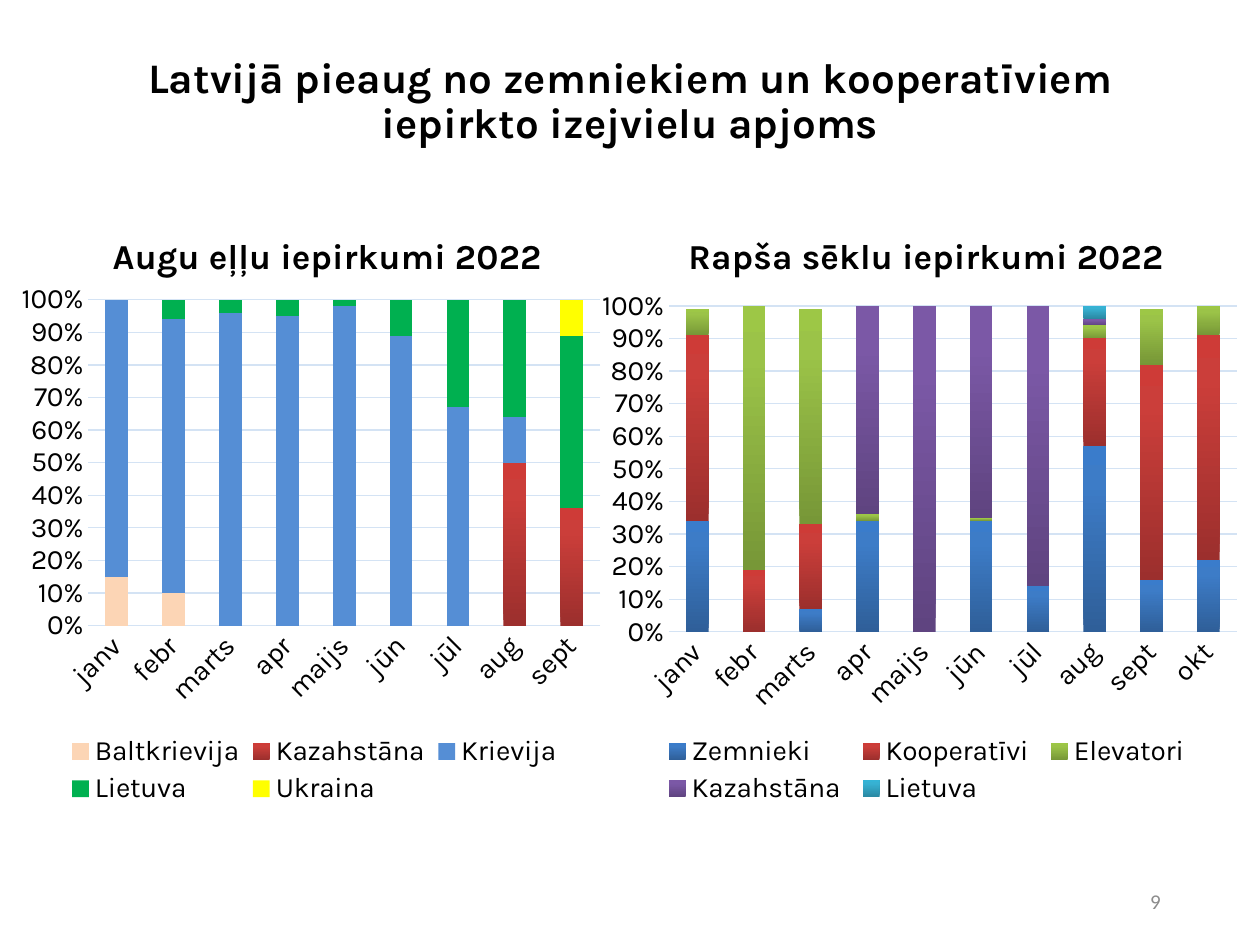
from dataclasses import dataclass

from pptx import Presentation
from pptx.chart.data import CategoryChartData
from pptx.dml.color import RGBColor
from pptx.enum.chart import XL_CHART_TYPE, XL_LEGEND_POSITION, XL_TICK_MARK
from pptx.enum.text import MSO_ANCHOR, PP_ALIGN
from pptx.oxml import parse_xml
from pptx.oxml.ns import nsdecls
from pptx.util import Inches, Pt


@dataclass(frozen=True)
class Theme:
    font: str = "Karla"
    number_font: str = "Calibri"
    text: str = "000000"
    muted: str = "8C8C8C"
    grid: str = "D4E3F4"
    peach: str = "FCD5B5"
    sky: str = "558ED5"
    green: str = "00B050"
    yellow: str = "FFFF00"
    blue_fade: tuple = ("2F5F99", "3D7CC7", "3A7CCB")
    red_fade: tuple = ("9C2F2D", "CB3E3A", "CE3B37")
    lime_fade: tuple = ("779737", "9BC348", "9DC746")
    purple_fade: tuple = ("5F4480", "7B58A6", "7C57A8")
    teal_fade: tuple = ("2A88A2", "37B1D2", "34B4D6")
    title_size: int = 24
    chart_title_size: int = 20
    label_size: int = 16
    number_size: int = 12


class SlideBuilder:
    def __init__(self, slide, theme):
        self.slide = slide
        self.theme = theme

    def style_font(self, font, size, color=None, name=None, bold=False):
        font.name = name or self.theme.font
        font.size = Pt(size)
        font.bold = bold
        font.color.rgb = RGBColor.from_string(color or self.theme.text)

    def add_text(self, box, text, size, align, spacing=1.0, **style):
        shape = self.slide.shapes.add_textbox(*map(Inches, box))
        frame = shape.text_frame
        frame.word_wrap = True
        frame.vertical_anchor = MSO_ANCHOR.MIDDLE
        paragraph = frame.paragraphs[0]
        paragraph.alignment = align
        paragraph.line_spacing = spacing
        run = paragraph.add_run()
        run.text = text
        self.style_font(run.font, size, **style)

    def style_line(self, line):
        line.color.rgb = RGBColor.from_string(self.theme.grid)
        line.width = Pt(0.75)

    def fill_series(self, series, color):
        if isinstance(color, str):
            series.format.fill.solid()
            series.format.fill.fore_color.rgb = RGBColor.from_string(color)
            return
        stops = "".join(
            f'<a:gs pos="{position}"><a:srgbClr val="{stop}"/></a:gs>'
            for position, stop in zip((0, 80000, 100000), color)
        )
        gradient = parse_xml(
            f'<a:gradFill {nsdecls("a")} rotWithShape="1"><a:gsLst>{stops}</a:gsLst>'
            '<a:lin ang="16200000" scaled="0"/></a:gradFill>'
        )
        series._element.get_or_add_spPr().insert(0, gradient)

    def place(self, predecessor, x, y, width=None, height=None, inner=False):
        target = '<c:layoutTarget val="inner"/>' if inner else ""
        sizes = "" if width is None else f'<c:w val="{width}"/><c:h val="{height}"/>'
        layout = parse_xml(
            f'<c:layout {nsdecls("c")}><c:manualLayout>{target}'
            '<c:xMode val="edge"/><c:yMode val="edge"/>'
            f'<c:x val="{x}"/><c:y val="{y}"/>{sizes}</c:manualLayout></c:layout>'
        )
        parent = predecessor.getparent()
        for old in parent.findall(layout.tag):
            parent.remove(old)
        predecessor.addnext(layout)

    def add_stacked_chart(self, kind, box, title, categories, series_rows,
                          title_at, plot_at, legend_at, maximum=None):
        data = CategoryChartData()
        data.categories = categories
        for name, color, values in series_rows:
            data.add_series(name, values)
        chart = self.slide.shapes.add_chart(kind, *map(Inches, box), data).chart
        self.style_font(chart.font, self.theme.label_size)

        chart.has_title = True
        run = chart.chart_title.text_frame.paragraphs[0].add_run()
        run.text = title
        self.style_font(run.font, self.theme.chart_title_size, bold=True)
        chart.chart_title.include_in_layout = False
        self.place(chart.chart_title._element.tx, *title_at)

        plot = chart.plots[0]
        plot.gap_width = 150
        plot.overlap = 100
        plot.vary_by_categories = False
        for series, (name, color, values) in zip(plot.series, series_rows):
            self.fill_series(series, color)

        for axis in (chart.category_axis, chart.value_axis):
            axis.major_tick_mark = XL_TICK_MARK.NONE
            axis.minor_tick_mark = XL_TICK_MARK.NONE
            self.style_font(axis.tick_labels.font, self.theme.label_size)
        self.style_line(chart.category_axis.format.line)
        chart.category_axis._element.txPr.bodyPr.set("rot", "-2700000")
        values_axis = chart.value_axis
        values_axis.format.line.fill.background()
        self.style_line(values_axis.major_gridlines.format.line)
        values_axis.tick_labels.number_format = "0%"
        values_axis.tick_labels.number_format_is_linked = False
        values_axis.major_unit = 0.1
        values_axis.minimum_scale = 0
        if maximum:
            values_axis.maximum_scale = maximum

        chart.has_legend = True
        legend = chart.legend
        legend.position = XL_LEGEND_POSITION.BOTTOM
        legend.include_in_layout = False
        self.style_font(legend.font, self.theme.label_size)
        self.place(legend._element.legendPos, *legend_at)
        plot_area = plot._element.getparent()
        anchor = parse_xml(f'<c:layout {nsdecls("c")}/>')
        for old in plot_area.findall(anchor.tag):
            plot_area.remove(old)
        plot_area.insert(0, anchor)
        self.place_plot(anchor, plot_at)

    def place_plot(self, anchor, plot_at):
        following = anchor.getnext()
        self.place(following, *plot_at, inner=True)
        following.addprevious(following.getnext())


def main():
    theme = Theme()
    presentation = Presentation()
    presentation.slide_width = Inches(10)
    presentation.slide_height = Inches(7.5)
    slide = presentation.slides.add_slide(presentation.slide_layouts[6])
    builder = SlideBuilder(slide, theme)
    months = ["janv", "febr", "marts", "apr", "maijs", "jūn", "jūl", "aug", "sept", "okt"]

    builder.add_stacked_chart(
        XL_CHART_TYPE.COLUMN_STACKED_100, (0.08, 1.55, 4.78, 4.88),
        "Augu eļļu iepirkumi 2022", months[:9],
        [
            ("Baltkrievija", theme.peach, (15, 10, 0, 0, 0, 0, 0, 0, 0)),
            ("Kazahstāna", theme.red_fade, (0, 0, 0, 0, 0, 0, 0, 50, 36)),
            ("Krievija", theme.sky, (85, 84, 96, 95, 98, 89, 67, 14, 0)),
            ("Lietuva", theme.green, (0, 6, 4, 5, 2, 11, 33, 36, 53)),
            ("Ukraina", theme.yellow, (0, 0, 0, 0, 0, 0, 0, 0, 11)),
        ],
        title_at=(0.16, 0.05), plot_at=(0.13, 0.17, 0.85, 0.53),
        legend_at=(0.08, 0.87, 0.85, 0.13),
    )
    builder.add_stacked_chart(
        XL_CHART_TYPE.COLUMN_STACKED, (4.68, 1.55, 5.24, 4.88),
        "Rapša sēklu iepirkumi 2022", months,
        [
            ("Zemnieki", theme.blue_fade,
             (0.34, 0, 0.07, 0.34, 0, 0.34, 0.14, 0.57, 0.16, 0.22)),
            ("Kooperatīvi", theme.red_fade,
             (0.57, 0.19, 0.26, 0, 0, 0, 0, 0.33, 0.66, 0.69)),
            ("Elevatori", theme.lime_fade,
             (0.08, 0.81, 0.66, 0.02, 0, 0.01, 0, 0.04, 0.17, 0.1)),
            ("Kazahstāna", theme.purple_fade,
             (0, 0, 0, 0.64, 1, 0.65, 0.86, 0.02, 0, 0)),
            ("Lietuva", theme.teal_fade, (0, 0, 0, 0, 0, 0, 0, 0.06, 0, 0)),
        ],
        title_at=(0.14, 0.05), plot_at=(0.12, 0.18, 0.86, 0.53),
        legend_at=(0.1, 0.87, 0.82, 0.13), maximum=1,
    )
    builder.add_text(
        (0.69, 0.25, 8.62, 1.12),
        "Latvijā pieaug no zemniekiem un kooperatīviem iepirkto izejvielu apjoms",
        theme.title_size, PP_ALIGN.CENTER, spacing=0.9, bold=True,
    )
    builder.add_text(
        (7.06, 6.95, 2.25, 0.4), "9", theme.number_size, PP_ALIGN.RIGHT,
        color=theme.muted, name=theme.number_font,
    )
    presentation.save("out.pptx")


if __name__ == "__main__":
    main()
